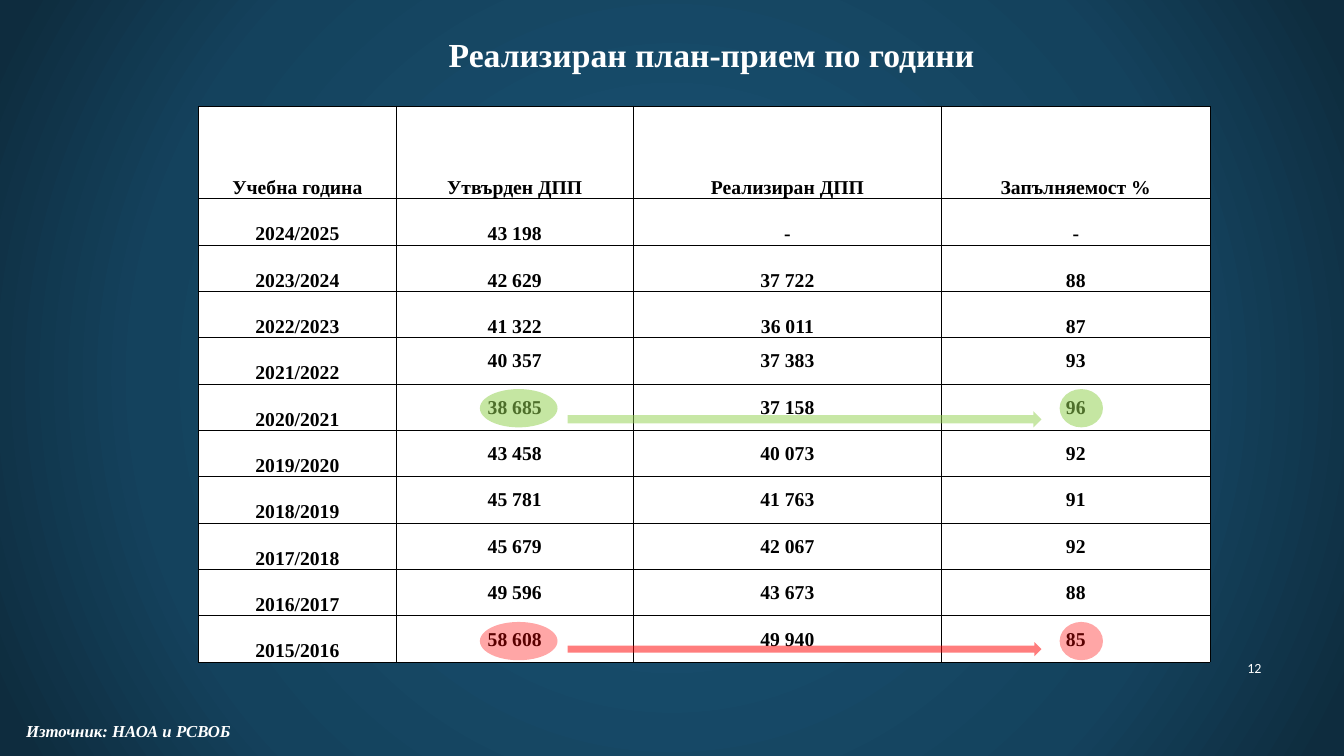
from lxml.etree import SubElement
from pptx import Presentation
from pptx.dml.color import RGBColor
from pptx.enum.shapes import MSO_SHAPE as Shape
from pptx.enum.text import MSO_ANCHOR as Anchor, MSO_AUTO_SIZE as AutoSize, PP_ALIGN as Align
from pptx.oxml import parse_xml
from pptx.oxml.ns import nsdecls, qn
from pptx.util import Pt

PX = 9144
WHITE = RGBColor(0xFF, 0xFF, 0xFF)
BLACK = RGBColor(0x00, 0x00, 0x00)
GREEN = RGBColor(0x92, 0xD0, 0x50)
RED = RGBColor(0xFF, 0x00, 0x00)
NAVY = RGBColor(0x18, 0x4E, 0x6E)
DEEP_NAVY = RGBColor(0x14, 0x42, 0x5D)
DARK_NAVY = RGBColor(0x0E, 0x2C, 0x3E)
BACKGROUND_STOPS = [(0, NAVY), (23, NAVY), (69, DEEP_NAVY), (97, DARK_NAVY)]

COLUMN_WIDTHS = [196, 235, 306, 266]
HEADER_HEIGHT, ROW_HEIGHT = 92, 46
BOTTOM_ANCHORED_ROWS = 4
ADMISSIONS = [
    ("Учебна година", "Утвърден ДПП", "Реализиран ДПП", "Запълняемост %"),
    ("2024/2025", "43 198", "-", "-"),
    ("2023/2024", "42 629", "37 722", "88"),
    ("2022/2023", "41 322", "36 011", "87"),
    ("2021/2022", "40 357", "37 383", "93"),
    ("2020/2021", "38 685", "37 158", "96"),
    ("2019/2020", "43 458", "40 073", "92"),
    ("2018/2019", "45 781", "41 763", "91"),
    ("2017/2018", "45 679", "42 067", "92"),
    ("2016/2017", "49 596", "43 673", "88"),
    ("2015/2016", "58 608", "49 940", "85"),
]


class SlideBuilder:
    """Hold the text style and current slide, and add each kind of element."""

    def __init__(self, slide):
        self.slide = slide
        self.style = {"name": "Times New Roman", "size": Pt(14), "bold": True}

    def background(self, stops):
        self.slide.background.fill.gradient()
        gradient = next(self.slide.element.iter(qn("a:gradFill")))
        stop_xml = "".join(
            f'<a:gs pos="{position * 1000}"><a:srgbClr val="{color}"/></a:gs>'
            for position, color in stops
        )
        gradient.getparent().replace(gradient, parse_xml(
            f'<a:gradFill {nsdecls("a")} rotWithShape="1"><a:gsLst>{stop_xml}</a:gsLst>'
            '<a:path path="circle"><a:fillToRect l="50000" t="50000" r="50000" b="50000"/>'
            "</a:path></a:gradFill>"
        ))

    def add_run(self, frame, text, color, align=Align.LEFT, **changes):
        paragraph = frame.paragraphs[0]
        paragraph.alignment = align
        run = paragraph.add_run()
        run.text = text
        for name, value in {**self.style, **changes}.items():
            setattr(run.font, name, value)
        run.font.color.rgb = color

    def format_frame(self, frame, wrap, anchor):
        values = {
            "word_wrap": wrap,
            "auto_size": AutoSize.NONE if wrap else AutoSize.SHAPE_TO_FIT_TEXT,
            "vertical_anchor": anchor,
        }
        for name, value in values.items():
            setattr(frame, name, value)

    def title(self, text, box, **changes):
        title = self.slide.shapes.title
        for name, value in zip(("left", "top", "width", "height"), box):
            setattr(title, name, value * PX)
        self.format_frame(title.text_frame, False, Anchor.TOP)
        title.text_frame.paragraphs[0].line_spacing = 1.0
        self.add_run(title.text_frame, text, WHITE, **changes)

    def text(self, text, box, wrap=False, anchor=Anchor.TOP, **changes):
        shape = self.slide.shapes.add_textbox(*(length * PX for length in box))
        self.format_frame(shape.text_frame, wrap, anchor)
        self.add_run(shape.text_frame, text, WHITE, **changes)

    def cell(self, cell, text, anchor):
        values = {
            "vertical_anchor": anchor, "margin_left": PX, "margin_right": PX,
            "margin_top": PX, "margin_bottom": 0,
        }
        for name, value in values.items():
            setattr(cell, name, value)
        properties = cell._tc.get_or_add_tcPr()
        for side in ("lnL", "lnR", "lnT", "lnB"):
            border = SubElement(properties, qn(f"a:{side}"), w=str(Pt(0.5)))
            fill = SubElement(border, qn("a:solidFill"))
            SubElement(fill, qn("a:srgbClr"), val=str(BLACK))
        cell.fill.solid()
        cell.fill.fore_color.rgb = WHITE
        self.add_run(cell.text_frame, text, BLACK, Align.CENTER)

    def table(self, rows, left, top, widths, heights):
        box = (left, top, sum(widths), sum(heights))
        table = self.slide.shapes.add_table(
            len(rows), len(widths), *(length * PX for length in box)
        ).table
        table.first_row = table.horz_banding = False
        for column, width in zip(table.columns, widths):
            column.width = width * PX
        for row, height in zip(table.rows, heights):
            row.height = height * PX
        for row_index, row in enumerate(rows):
            for column_index, text in enumerate(row):
                at_bottom = row_index < BOTTOM_ANCHORED_ROWS or column_index == 0
                anchor = Anchor.BOTTOM if at_bottom else Anchor.MIDDLE
                self.cell(table.cell(row_index, column_index), text, anchor)

    def highlight(self, kind, box, color, opacity):
        shape = self.slide.shapes.add_shape(kind, *(length * PX for length in box))
        shape.shadow.inherit = False
        shape.line.fill.background()
        shape.fill.solid()
        shape.fill.fore_color.rgb = color
        color_element = next(shape.element.spPr.iter(qn("a:srgbClr")))
        SubElement(color_element, qn("a:alpha"), val=str(opacity * 1000))


def main():
    presentation = Presentation()
    presentation.slide_width = 1333 * PX
    presentation.slide_height = 750 * PX
    builder = SlideBuilder(presentation.slides.add_slide(presentation.slide_layouts[5]))
    builder.background(BACKGROUND_STOPS)
    builder.title("Реализиран план-прием по години", (435, 29, 547, 50), size=Pt(24))
    heights = [HEADER_HEIGHT] + [ROW_HEIGHT] * (len(ADMISSIONS) - 1)
    builder.table(ADMISSIONS, 197, 105, COLUMN_WIDTHS, heights)
    for color, opacity, top, arrow_top, arrow_height in (
        (GREEN, 53, 386, 408, 16),
        (RED, 35, 617, 637, 14),
    ):
        for left, width in ((1051, 43), (476, 77)):
            builder.highlight(Shape.OVAL, (left, top, width, 38), color, opacity)
        arrow_box = (563, arrow_top, 470, arrow_height)
        builder.highlight(Shape.RIGHT_ARROW, arrow_box, color, 51)
    builder.text("Източник: НАОА и РСВОБ", (16, 710, 225, 30), size=Pt(12), italic=True)
    builder.text("12", (1123, 642, 138, 41), wrap=True, anchor=Anchor.MIDDLE,
                 align=Align.RIGHT, name="Calibri", size=Pt(10), bold=False)
    presentation.save("out.pptx")


if __name__ == "__main__":
    main()
